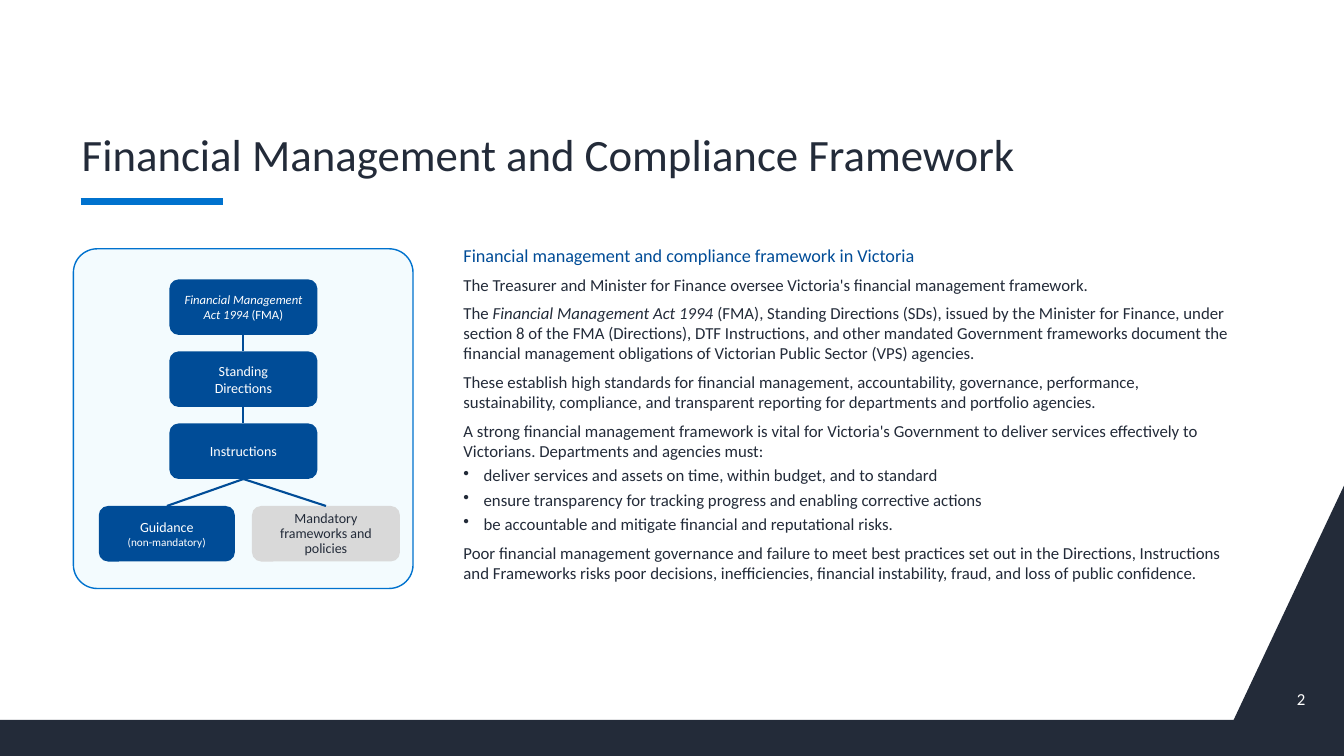
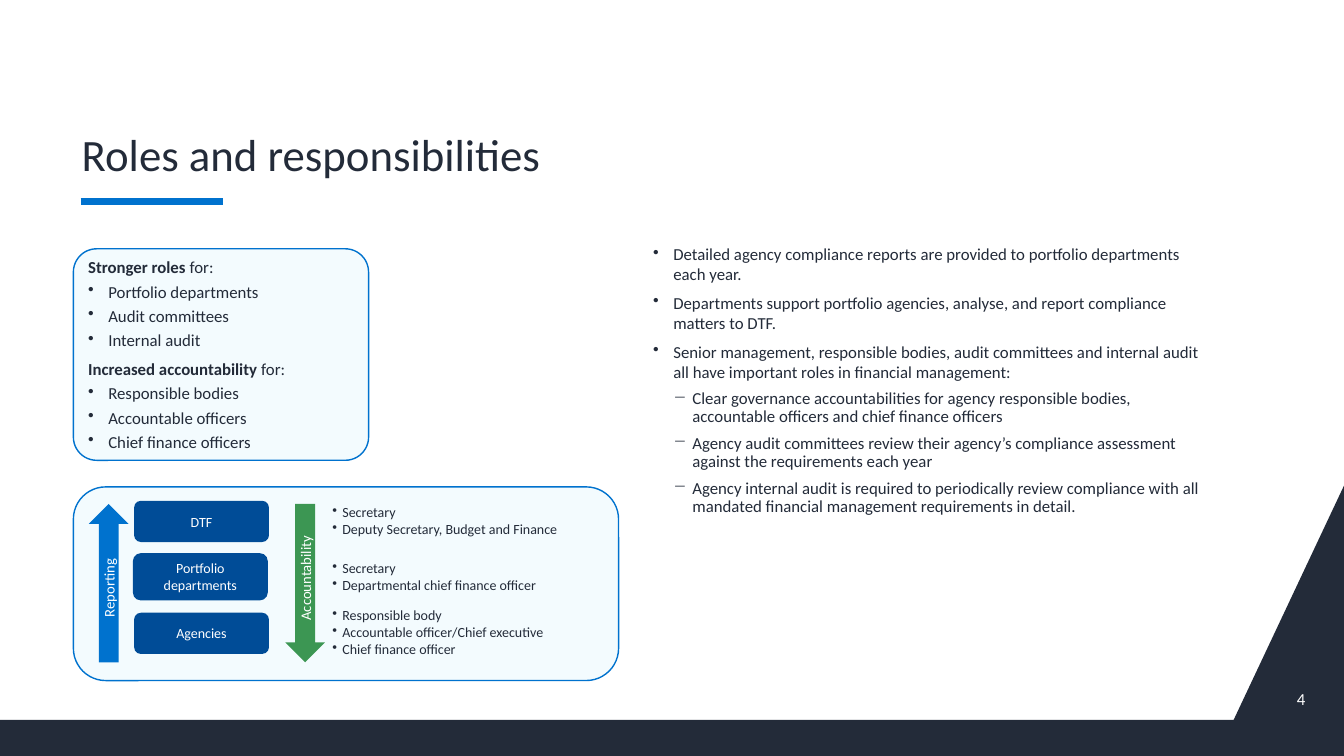
from lxml import etree
from pptx import Presentation
from pptx.dml.color import RGBColor
from pptx.enum import shapes, text
from pptx.oxml import ns
from pptx.util import Cm, Pt

NAVY = RGBColor(0x23, 0x2B, 0x39)
BLUE = RGBColor(0x00, 0x4C, 0x97)
BRIGHT = RGBColor(0x00, 0x72, 0xCE)
PALE = RGBColor(0xF3, 0xFB, 0xFE)
GREY = RGBColor(0xD9, 0xD9, 0xD9)
GREEN = RGBColor(0x3C, 0x96, 0x53)
WHITE = RGBColor(0xFF, 0xFF, 0xFF)
FONT = "Calibri"
WIDTH, HEIGHT = 33.87, 19.05
LEFT, TOP = 1.85, 6.27  # first panel's corner
TIGHT = (0.1, 0.13, 0.1, 0.13)

ROUND = shapes.MSO_SHAPE.ROUNDED_RECTANGLE
LINE = shapes.MSO_CONNECTOR.STRAIGHT
MIDDLE = text.MSO_ANCHOR.MIDDLE
CENTER = text.PP_ALIGN.CENTER

# style: indent (cm), hanging (cm), before (pt), after (pt), line spacing, bullet
STYLES = {
    "plain": (0, 0, 0, 0, 1.0, None),
    "snug": (0, 0, 0, 0, 0.9, None),
    "body": (0, 0, 6, 0, 1.0, None),
    "bullet": (0.51, 0.51, 3, 0, 1.0, "•"),
    "point": (0.51, 0.51, 0, 6, 1.0, "•"),
    "dash": (0.99, 0.48, 0, 6, 0.9, "−"),
    "small": (0.25, 0.25, 0, 0, 1.0, "•"),
}


def add_box(s, x, y, w, h, fill=None, line=None, preset=ROUND):
    """Add a preset shape, or a text box when there is no fill; lengths in cm."""
    if fill is None:
        return s.shapes.add_textbox(Cm(x), Cm(y), Cm(w), Cm(h))
    sp = s.shapes.add_shape(preset, Cm(x), Cm(y), Cm(w), Cm(h))
    sp.shadow.inherit = False
    sp.fill.solid()
    sp.fill.fore_color.rgb = fill
    if line is None:
        sp.line.fill.background()
    else:
        sp.line.color.rgb = line
        sp.line.width = Pt(1)
    return sp


def set_text(sp, paras, size, color=NAVY, align=text.PP_ALIGN.LEFT,
             anchor=text.MSO_ANCHOR.TOP, margins=(0.25, 0.13, 0.25, 0.13), bold=False):
    """Write (style, text) pairs; *starred* parts are italic, or bold if asked."""
    tf = sp.text_frame
    tf.word_wrap = True
    tf.vertical_anchor = anchor
    tf.margin_left, tf.margin_top, tf.margin_right, tf.margin_bottom = map(Cm, margins)
    for n, (style, content) in enumerate(paras):
        p = tf.add_paragraph() if n else tf.paragraphs[0]
        indent, hanging, before, after, spacing, bullet = STYLES[style]
        p.alignment = align
        p.space_before, p.space_after = Pt(before), Pt(after)
        p.line_spacing = spacing
        if bullet:
            pPr = p._p.get_or_add_pPr()
            pPr.set("marL", str(Cm(indent)))
            pPr.set("indent", str(-Cm(hanging)))
            etree.SubElement(pPr, ns.qn("a:buChar")).set("char", bullet)
        for i, part in enumerate(content.split("*")):
            if not part:
                continue
            r = p.add_run()
            r.text = part
            r.font.name, r.font.size = FONT, Pt(size)
            r.font.color.rgb = color
            if i % 2:
                r.font.bold, r.font.italic = bold, not bold


prs = Presentation()
prs.slide_width, prs.slide_height = Cm(WIDTH), Cm(HEIGHT)

# Shared frame: footer band, title, rule and page number
BAND = [(31.09, 18.14), (WIDTH, 12.24), (WIDTH, HEIGHT), (0, HEIGHT)]
for title, number in [("Financial Management and Compliance Framework", "2"),
                      ("Roles and responsibilities", "4")]:
    s = prs.slides.add_slide(prs.slide_layouts[6])
    outline = s.shapes.build_freeform(Cm(0), Cm(18.14))
    outline.add_line_segments([(Cm(x), Cm(y)) for x, y in BAND])
    band = outline.convert_to_shape()
    band.shadow.inherit = False
    band.fill.solid()
    band.fill.fore_color.rgb = NAVY
    band.line.fill.background()
    rule = s.shapes.add_connector(LINE, Cm(2.03), Cm(5.08), Cm(5.61), Cm(5.08))
    rule.line.color.rgb = BRIGHT
    rule.line.width = Pt(4.5)
    set_text(add_box(s, 31.93, 17.09, 1.22, 1.02), [("plain", number)], 12, WHITE,
             text.PP_ALIGN.RIGHT, MIDDLE)
    set_text(add_box(s, 1.96, 1.83, 29.21, 2.87), [("snug", title)], 32,
             anchor=text.MSO_ANCHOR.BOTTOM, margins=TIGHT)

framework, roles = prs.slides

# Framework slide: text
body = add_box(framework, 11.58, 6.02, 19.58, 11.13)
set_text(body, [
    ("plain", "Financial management and compliance framework in Victoria"),
    ("body", "The Treasurer and Minister for Finance oversee Victoria's financial "
             "management framework."),
    ("body", "The *Financial Management Act 1994 *(FMA), Standing Directions (SDs), issued "
             "by the Minister for Finance, under section 8 of the FMA (Directions), DTF "
             "Instructions, and other mandated Government frameworks document the financial "
             "management obligations of Victorian Public Sector (VPS) agencies."),
    ("body", "These establish high standards for financial management, accountability, "
             "governance, performance, sustainability, compliance, and transparent "
             "reporting for departments and portfolio agencies."),
    ("body", "A strong financial management framework is vital for Victoria's Government to "
             "deliver services effectively to Victorians. Departments and agencies must:"),
    ("bullet", "deliver services and assets on time, within budget, and to standard"),
    ("bullet", "ensure transparency for tracking progress and enabling corrective actions"),
    ("bullet", "be accountable and mitigate financial and reputational risks."),
    ("body", "Poor financial management governance and failure to meet best practices set "
             "out in the Directions, Instructions and Frameworks risks poor decisions, "
             "inefficiencies, financial instability, fraud, and loss of public confidence."),
], 12, margins=TIGHT)
heading = body.text_frame.paragraphs[0].runs[0]
heading.font.size = Pt(13)
heading.font.color.rgb = BLUE

# Framework slide: hierarchy
panel = add_box(framework, LEFT, TOP, 8.56, 8.56, PALE, BRIGHT)
panel.adjustments[0] = 0.07
BOX_X, BOX_W, BOX_H = 4.27, 3.73, 1.4
BOX_Y, STEP, BASE_Y = 7.04, 1.815, 12.75
center = BOX_X + BOX_W / 2
tiers = [
    (9, [("plain", "*Financial Management Act 1994 *(FMA)")]),
    (10, [("plain", "Standing"), ("plain", "Directions")]),
    (10, [("plain", "Instructions")]),
]
links = []
for i, (size, paras) in enumerate(tiers):
    y = BOX_Y + i * STEP
    sp = add_box(framework, BOX_X, y, BOX_W, BOX_H, BLUE)
    set_text(sp, paras, size, WHITE, CENTER, MIDDLE)
    if i:
        links.append((y - STEP + BOX_H, center, y))
base = [
    (6.35, 3.73, GREY, NAVY, [("snug", "Mandatory frameworks and policies")]),
    (2.49, 3.43, BLUE, WHITE, [("plain", "Guidance"), ("plain", "(non-mandatory)")]),
]
for x, w, fill, color, paras in base:
    sp = add_box(framework, x, BASE_Y, w, BOX_H, fill)
    set_text(sp, paras, 10, color, CENTER, MIDDLE)
    links.append((BOX_Y + 2 * STEP + BOX_H, x + w / 2, BASE_Y))
sp.text_frame.paragraphs[1].runs[0].font.size = Pt(8)
for start_y, end_x, end_y in links:
    link = framework.shapes.add_connector(LINE, Cm(center), Cm(start_y), Cm(end_x), Cm(end_y))
    link.line.color.rgb = BLUE
    link.line.width = Pt(1.5)

# Roles slide: text
set_text(add_box(roles, 16.36, 6.02, 14.17, 11.13), [
    ("point", "Detailed agency compliance reports are provided to portfolio departments "
              "each year."),
    ("point", "Departments support portfolio agencies, analyse, and report compliance "
              "matters to DTF."),
    ("point", "Senior management, responsible bodies, audit committees and internal audit "
              "all have important roles in financial management:"),
    ("dash", "Clear governance accountabilities for agency responsible bodies, accountable "
             "officers and chief finance officers"),
    ("dash", "Agency audit committees review their agency’s compliance assessment against "
             "the requirements each year"),
    ("dash", "Agency internal audit is required to periodically review compliance with all "
             "mandated financial management requirements in detail."),
], 12, margins=TIGHT)

panel = add_box(roles, LEFT, TOP, 7.44, 5.33, PALE, BRIGHT)
panel.adjustments[0] = 0.11
set_text(panel, [
    ("body", "*Stronger roles *for:"),
    ("bullet", "Portfolio departments"),
    ("bullet", "Audit committees"),
    ("bullet", "Internal audit"),
    ("body", "*Increased accountability *for:"),
    ("bullet", "Responsible bodies"),
    ("bullet", "Accountable officers"),
    ("bullet", "Chief finance officers"),
], 12, anchor=MIDDLE, margins=(0.2, 0.13, 0.1, 0.13), bold=True)

# Roles slide: reporting lines
add_box(roles, LEFT, 12.27, 13.74, 4.88, PALE, BRIGHT)
levels = [
    ("DTF", 3.38, 12.62, 1.04, 12.6, ["Secretary", "Deputy Secretary, Budget and Finance"]),
    ("Portfolio departments", 3.35, 13.94, 1.19, 14.0,
     ["Secretary", "Departmental chief finance officer"]),
    ("Agencies", 3.38, 15.44, 1.04, 15.19,
     ["Responsible body", "Accountable officer/Chief executive", "Chief finance officer"]),
]
for name, x, y, h, list_y, officers in levels:
    set_text(add_box(roles, x, y, 3.4, h, BLUE), [("plain", name)], 10, WHITE, CENTER, MIDDLE)
    set_text(add_box(roles, 8.28, list_y, 7.19, 0.2 + 0.43 * len(officers)),
             [("small", officer) for officer in officers], 10, margins=(0.1,) * 4)
for name, x, fill, preset in [("Reporting", 2.24, BRIGHT, shapes.MSO_SHAPE.UP_ARROW),
                              ("Accountability", 7.19, GREEN, shapes.MSO_SHAPE.DOWN_ARROW)]:
    arrow = add_box(roles, x, 12.7, 1.0, 3.99, fill, preset=preset)
    set_text(arrow, [("plain", name)], 10.5, WHITE, CENTER, MIDDLE)
    arrow.text_frame._txBody.bodyPr.set("vert", "vert270")

# Connectors carry a theme shadow until an empty effect list replaces it
for s in prs.slides:
    for sp in s.shapes:
        if sp.shape_type == shapes.MSO_SHAPE_TYPE.LINE:
            etree.SubElement(sp._element.spPr, ns.qn("a:effectLst"))

prs.save("out.pptx")
